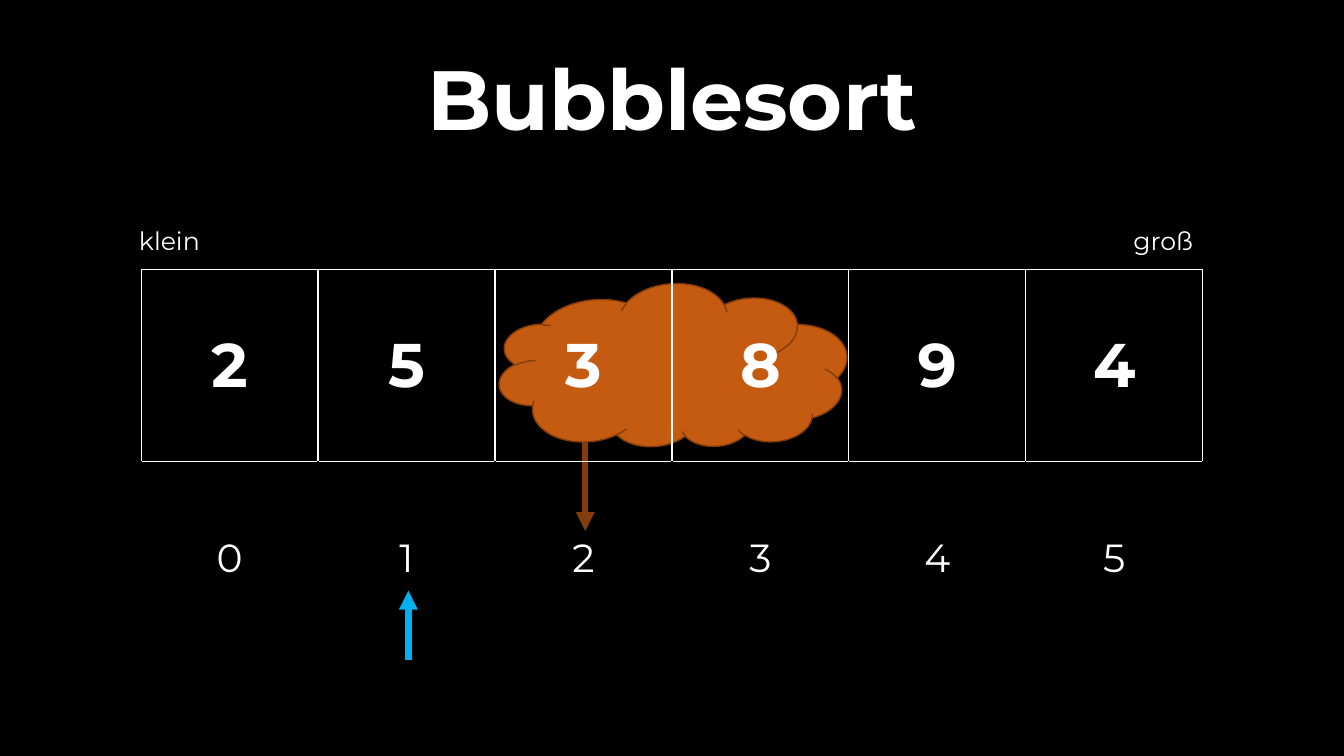
from dataclasses import dataclass

import pptx
import pptx.dml.color
import pptx.enum.shapes
import pptx.enum.text
import pptx.oxml
import pptx.oxml.ns
import pptx.util
from pptx.enum.text import MSO_ANCHOR, PP_ALIGN

SLIDE_WIDTH, SLIDE_HEIGHT = 13.33, 7.5
GRID_LEFT, GRID_TOP = 1.4, 2.67
COLUMN, ROW = 1.755, 1.91
FONT = "Montserrat"
BLACK, WHITE, BLUE = "000000", "FFFFFF", "00B0F0"
ORANGE, BROWN = "C55A11", "843C0B"
VALUES = [2, 5, 3, 8, 9, 4]


@dataclass
class Label:
    """A text box; its place and size are shares of the slide."""
    text: str
    left: float
    top: float
    width: float
    height: float
    size: int
    align: PP_ALIGN
    bold: bool = False
    anchor: MSO_ANCHOR = MSO_ANCHOR.TOP


@dataclass
class Arrow:
    """A vertical arrow, placed in columns and rows of the grid."""
    column: float
    start_row: float
    end_row: float
    color: str


LABELS = [
    Label("groß", 0.782, 0.291, 0.113, 0.053, 18, PP_ALIGN.RIGHT),
    Label("klein", 0.096, 0.291, 0.113, 0.053, 18, PP_ALIGN.LEFT),
    Label("Bubblesort", 0.011, 0.041, 0.978, 0.19, 60, PP_ALIGN.CENTER, True, MSO_ANCHOR.MIDDLE),
]
COMPARE_ARROW = Arrow(2.51, 0.63, 1.36, BROWN)
POSITION_ARROW = Arrow(1.51, 2.03, 1.67, BLUE)


def rgb(color: str) -> pptx.dml.color.RGBColor:
    return pptx.dml.color.RGBColor.from_string(color)


def grid_x(column: float) -> int:
    return pptx.util.Inches(GRID_LEFT + column * COLUMN)


def grid_y(row: float) -> int:
    return pptx.util.Inches(GRID_TOP + row * ROW)


def style_paragraph(paragraph, size: int, bold: bool, align: PP_ALIGN) -> None:
    paragraph.alignment = align
    paragraph.font.name = FONT
    paragraph.font.size = pptx.util.Pt(size)
    paragraph.font.bold = bold
    paragraph.font.color.rgb = rgb(WHITE)


def add_label(slide, label: Label) -> None:
    box = slide.shapes.add_textbox(
        pptx.util.Inches(label.left * SLIDE_WIDTH), pptx.util.Inches(label.top * SLIDE_HEIGHT),
        pptx.util.Inches(label.width * SLIDE_WIDTH), pptx.util.Inches(label.height * SLIDE_HEIGHT))
    frame = box.text_frame
    frame.word_wrap = True
    frame.vertical_anchor = label.anchor
    frame.text = label.text
    style_paragraph(frame.paragraphs[0], label.size, label.bold, label.align)
    if label.anchor == MSO_ANCHOR.MIDDLE:
        frame.paragraphs[0].line_spacing = 0.9
        frame.paragraphs[0].space_before = pptx.util.Pt(10)


def add_arrow(slide, arrow: Arrow) -> None:
    x = grid_x(arrow.column)
    connector = slide.shapes.add_connector(
        pptx.enum.shapes.MSO_CONNECTOR.STRAIGHT,
        x, grid_y(arrow.start_row), x, grid_y(arrow.end_row))
    connector.line.color.rgb = rgb(arrow.color)
    connector.line.width = pptx.util.Pt(4.5)
    line = connector.line._get_or_add_ln()
    pptx.oxml.ns.qn("a:tailEnd")
    line.append(pptx.oxml.parse_xml(
        f'<a:tailEnd {pptx.oxml.ns.nsdecls("a")} type="triangle"/>'))
    connector._element.spPr.append(pptx.oxml.parse_xml(
        f'<a:effectLst {pptx.oxml.ns.nsdecls("a")}/>'))


def add_bubble(slide) -> None:
    """Cloud behind the two values being compared."""
    cloud = slide.shapes.add_shape(
        pptx.enum.shapes.MSO_SHAPE.CLOUD, grid_x(2.02), grid_y(0.08),
        pptx.util.Inches(1.97 * COLUMN), pptx.util.Inches(0.86 * ROW))
    cloud.rotation = 355.5
    cloud._element.spPr.xfrm.set("flipV", "1")
    cloud.shadow.inherit = False
    cloud.fill.solid()
    cloud.fill.fore_color.rgb = rgb(ORANGE)
    cloud.line.color.rgb = rgb(BROWN)
    cloud.line.width = pptx.util.Pt(1)


def set_borders(cell, colors: dict[str, str]) -> None:
    properties = cell._tc.get_or_add_tcPr()
    for index, (side, color) in enumerate(colors.items()):
        properties.insert(index, pptx.oxml.parse_xml(
            f'<a:ln{side} {pptx.oxml.ns.nsdecls("a")} w="12700"><a:solidFill>'
            f'<a:srgbClr val="{color}"/></a:solidFill></a:ln{side}>'))


def add_array(slide) -> None:
    """Boxed values above their indices."""
    count = len(VALUES)
    table = slide.shapes.add_table(
        2, count, grid_x(0), grid_y(0),
        pptx.util.Inches(count * COLUMN), pptx.util.Inches(2 * ROW)).table
    table.first_row = table.horz_banding = False
    for column in table.columns:
        column.width = pptx.util.Inches(COLUMN)
    rows = [(VALUES, 44, True, WHITE), (range(count), 28, False, BLACK)]
    for row, (numbers, size, bold, border) in enumerate(rows):
        table.rows[row].height = pptx.util.Inches(ROW)
        for column, number in enumerate(numbers):
            cell = table.cell(row, column)
            cell.text = str(number)
            cell.vertical_anchor = MSO_ANCHOR.MIDDLE
            cell.fill.background()
            style_paragraph(cell.text_frame.paragraphs[0], size, bold, PP_ALIGN.CENTER)
            set_borders(cell, {"L": border, "R": border, "T": WHITE, "B": border if row else WHITE})


def main() -> None:
    presentation = pptx.Presentation()
    presentation.slide_width = pptx.util.Inches(SLIDE_WIDTH)
    presentation.slide_height = pptx.util.Inches(SLIDE_HEIGHT)
    slide = presentation.slides.add_slide(presentation.slide_layouts[6])
    slide.background.fill.solid()
    slide.background.fill.fore_color.rgb = rgb(BLACK)

    add_arrow(slide, COMPARE_ARROW)
    add_bubble(slide)
    add_array(slide)
    add_arrow(slide, POSITION_ARROW)
    for label in LABELS:
        add_label(slide, label)
    presentation.save("out.pptx")


if __name__ == "__main__":
    main()
